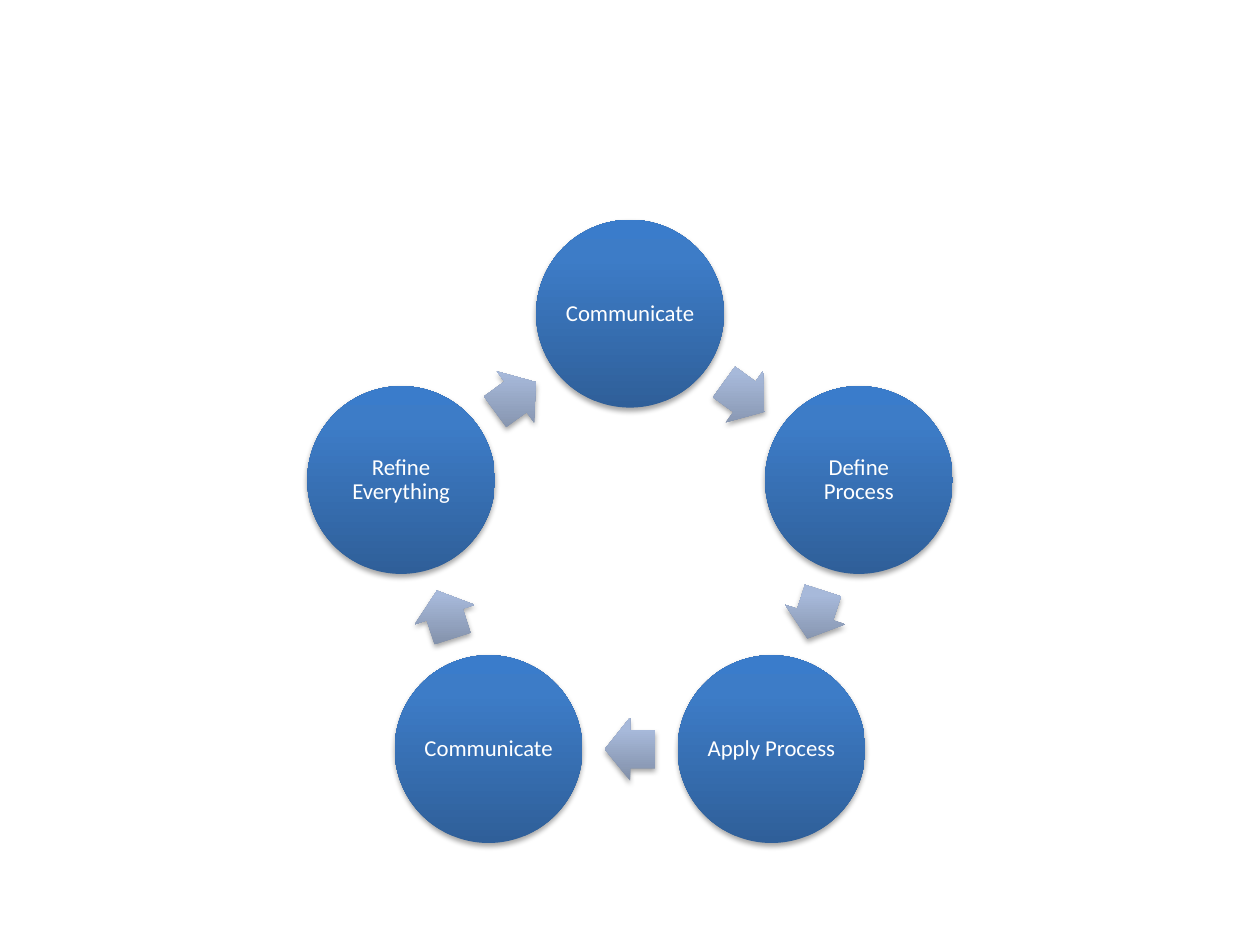
from math import cos, radians, sin

from pptx import Presentation
from pptx.dml.color import RGBColor as RGB
from pptx.enum.shapes import MSO_SHAPE as Shape
from pptx.enum.text import MSO_ANCHOR as Anchor, PP_ALIGN as Align
from pptx.oxml import parse_xml
from pptx.oxml.ns import nsdecls
from pptx.util import Inches, Pt

WHITE = RGB(0xFF, 0xFF, 0xFF)
BLUES = RGB(0x2F, 0x5F, 0x99), RGB(0x3D, 0x7C, 0xC7), RGB(0x3A, 0x7C, 0xCB)
GRAYS = RGB(0x81, 0x8F, 0xA8), RGB(0xA7, 0xB9, 0xDA), RGB(0xA7, 0xBA, 0xDC)
STOPS = 0, 80, 100
STEPS = ["Communicate", "Define Process", "Apply Process",
         "Communicate", "Refine Everything"]
WIDE, HIGH = 10, 7.5


def frame(mid, wide, high):
    """Left, top, width and height of a box centred on a point."""
    x, y = mid
    return [Inches(n) for n in (x - wide / 2, y - high / 2, wide, high)]


def paint(shape, tones):
    """Upright gradient, no outline, soft shadow below."""
    shape.line.fill.background()
    line = shape.line._get_or_add_ln()
    stops = "".join(
        f'<a:gs pos="{stop * 1000}"><a:srgbClr val="{tone}"/></a:gs>'
        for stop, tone in zip(STOPS, tones))
    line.addprevious(parse_xml(
        f'<a:gradFill {nsdecls("a")} rotWithShape="0"><a:gsLst>{stops}</a:gsLst>'
        '<a:lin ang="16200000" scaled="0"/></a:gradFill>'))
    line.addnext(parse_xml(
        f'<a:effectLst {nsdecls("a")}><a:outerShdw blurRad="{Pt(3.1)}" '
        f'dist="{Pt(1.8)}" dir="5400000" rotWithShape="0"><a:srgbClr val="000000">'
        '<a:alpha val="35000"/></a:srgbClr></a:outerShdw></a:effectLst>'))


def write(group, box, text, size=13, font="Calibri", color=WHITE, inset=0.02):
    body = group.shapes.add_textbox(*box).text_frame
    body.word_wrap = True
    body.vertical_anchor = Anchor.MIDDLE
    body.margin_left = body.margin_right = Inches(inset)
    body.margin_top = body.margin_bottom = Inches(inset)
    para = body.paragraphs[0]
    para.alignment = Align.CENTER
    para.line_spacing = 0.9
    run = para.add_run()
    run.text = text
    run.font.size, run.font.name = Pt(size), font
    run.font.color.rgb = color


def cycle(slide, mid, reach, steps, disc=1.49, label=1.06):
    """Discs evenly spaced on a ring, with an arrow between neighbours."""
    group = slide.shapes.add_group_shape()
    turn = 360 / len(steps)
    # Arrows lie at the middle of each side of the polygon
    inner = reach * cos(radians(turn / 2))

    def point(angle, radius):
        return (mid[0] + radius * sin(radians(angle)),
                mid[1] - radius * cos(radians(angle)))

    for i, step in enumerate(steps):
        # Disc and label
        spot = point(i * turn, reach)
        paint(group.shapes.add_shape(Shape.OVAL, *frame(spot, disc, disc)), BLUES)
        write(group, frame(spot, label, label), step)

        # Arrow to the next disc
        angle = (i + 0.5) * turn
        arrow = group.shapes.add_shape(
            Shape.RIGHT_ARROW, *frame(point(angle, inner), 0.4, 0.5))
        arrow.adjustments[0], arrow.adjustments[1] = 0.6, 0.5
        arrow.rotation = angle
        paint(arrow, GRAYS)


def main():
    deck = Presentation()
    deck.slide_width, deck.slide_height = Inches(WIDE), Inches(HIGH)
    slide = deck.slides.add_slide(deck.slide_layouts[6])
    cycle(slide, (WIDE / 2, 4.4), 1.91, STEPS)
    deck.save("out.pptx")


if __name__ == "__main__":
    main()
